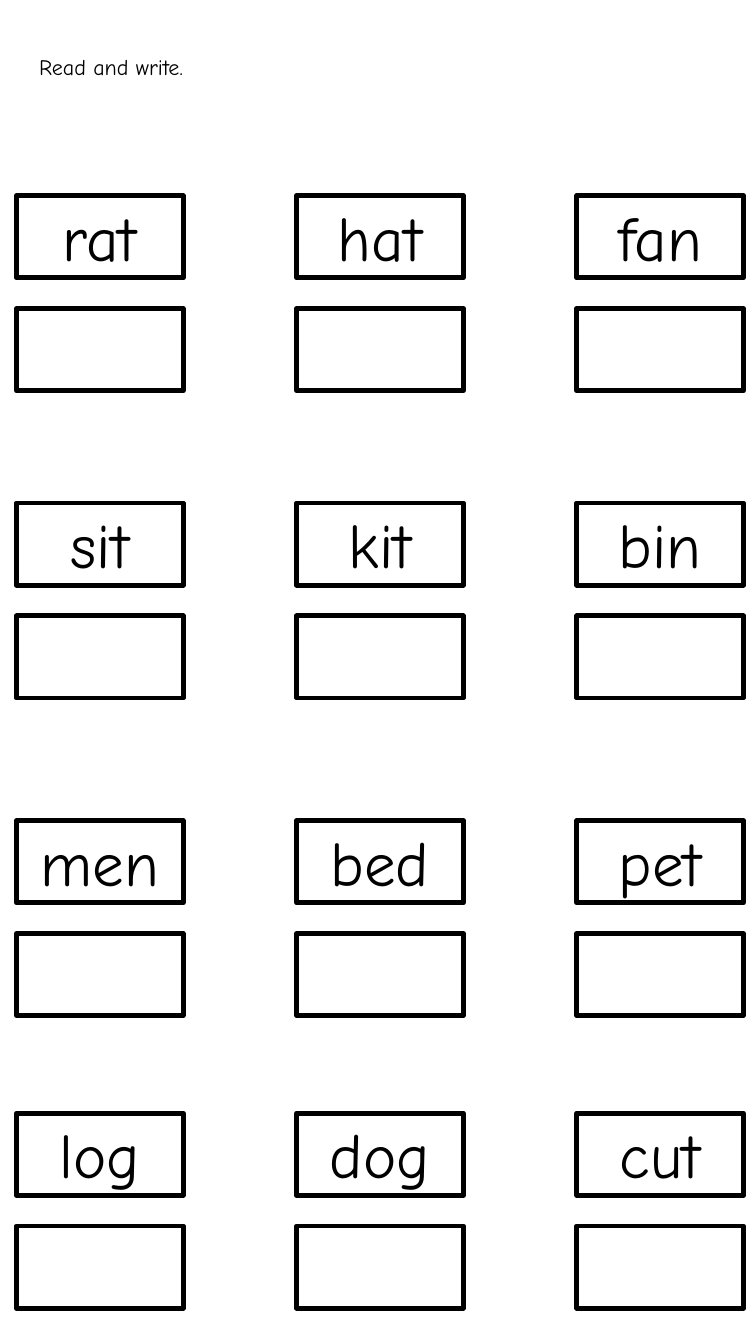
from pptx import Presentation
from pptx.dml.color import RGBColor
from pptx.enum.shapes import MSO_SHAPE
from pptx.enum.text import MSO_ANCHOR, PP_ALIGN
from pptx.util import Inches, Pt

RECTANGLE = MSO_SHAPE.RECTANGLE
TOP = MSO_ANCHOR.TOP
LEFT, CENTER = PP_ALIGN.LEFT, PP_ALIGN.CENTER
BLACK = RGBColor(0, 0, 0)
FONT = "Comic Neue"

BOX_WIDTH, BOX_HEIGHT = 2.94, 1.45
FIRST_COLUMN, COLUMN_STEP = 0.29, 4.94
WRITING_OFFSET = 1.99
WORD_ROWS = [
    (3.45, ["rat", "hat", "fan"]),
    (8.87, ["sit", "kit", "bin"]),
    (14.47, ["men", "bed", "pet"]),
    (19.63, ["log", "dog", "cut"]),
]


def write_text(shape, text, size, alignment=LEFT):
    frame = shape.text_frame
    frame.word_wrap = True
    frame.vertical_anchor = TOP
    paragraph = frame.paragraphs[0]
    paragraph.alignment = alignment
    run = paragraph.add_run()
    run.text = text
    run.font.name = FONT
    run.font.size = Pt(size)
    run.font.color.rgb = BLACK


def add_box(slide, left, top):
    box = slide.shapes.add_shape(
        RECTANGLE, Inches(left), Inches(top), Inches(BOX_WIDTH), Inches(BOX_HEIGHT)
    )
    box.shadow.inherit = False
    box.fill.background()
    box.line.color.rgb = BLACK
    box.line.width = Pt(6)
    return box


presentation = Presentation()
presentation.slide_width = Inches(13.33)
presentation.slide_height = Inches(23.7)
slide = presentation.slides.add_slide(presentation.slide_layouts[6])

instruction = slide.shapes.add_textbox(
    Inches(0.59), Inches(0.9), Inches(11.11), Inches(0.57)
)
write_text(instruction, "Read and write.", 28)

for top, words in WORD_ROWS:
    for column, word in enumerate(words):
        left = FIRST_COLUMN + column * COLUMN_STEP
        word_box = add_box(slide, left, top)
        write_text(word_box, word, 80, alignment=CENTER)
        add_box(slide, left, top + WRITING_OFFSET)

presentation.save("out.pptx")
